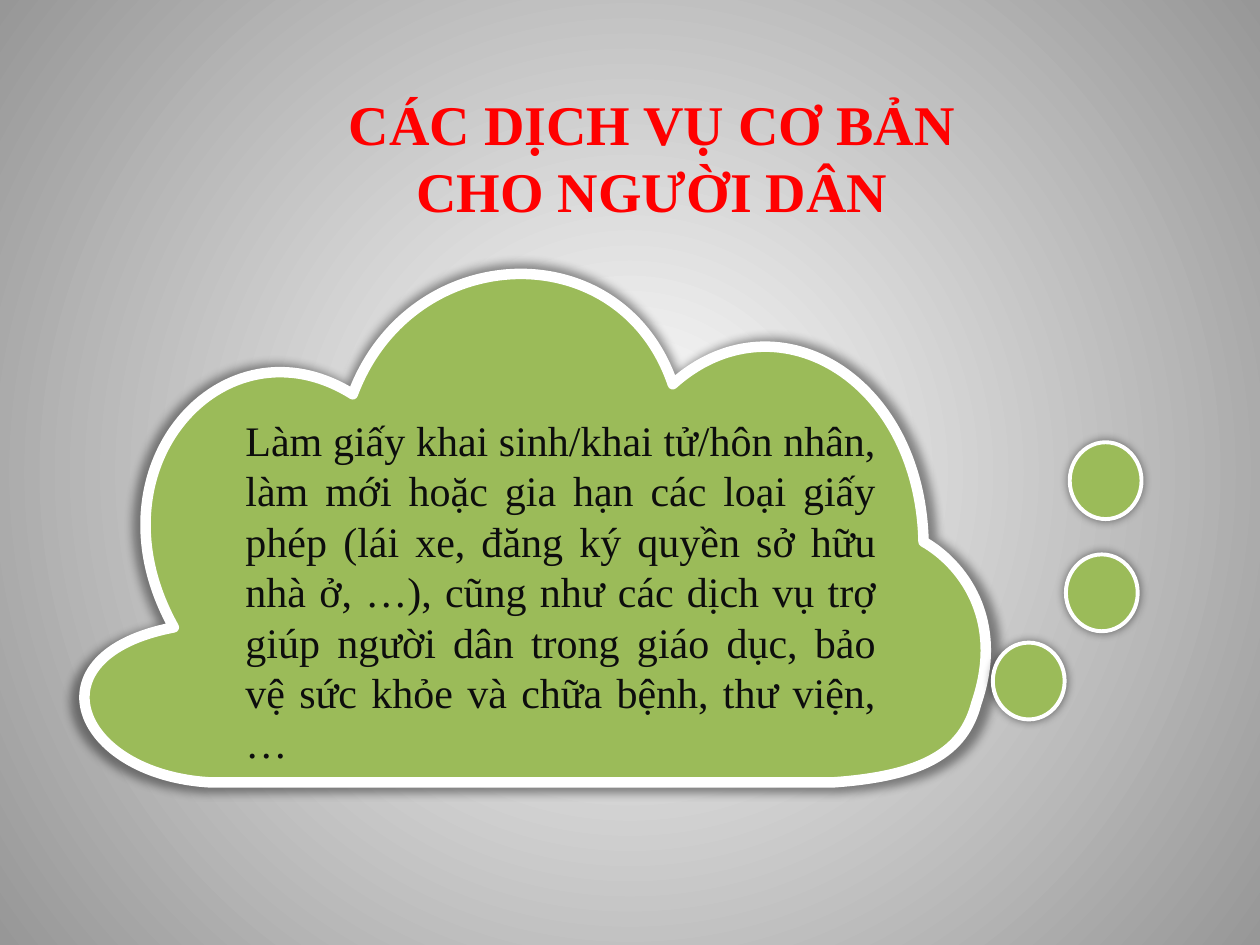
"""Build a slide with a cloud-shaped thought about basic public services."""
from lxml import etree
from pptx import Presentation
from pptx import util as u
from pptx.dml.color import RGBColor
from pptx.enum import shapes, text
from pptx.oxml.ns import qn

COLORS = {"center": "FFFFFF", "edge": "979797", "title": "FF0000", "body": "0D0D0D",
          "cloud": "9BBB59", "outline": "FFFFFF", "shadow": "000000"}
FONT = "Times New Roman"
TITLE = "CÁC DỊCH VỤ CƠ BẢN CHO NGƯỜI DÂN"
BODY = ("Làm giấy khai sinh/khai tử/hôn nhân, làm mới hoặc gia hạn các loại giấy phép "
        "(lái xe, đăng ký quyền sở hữu nhà ở, …), cũng như các dịch vụ trợ giúp người dân "
        "trong giáo dục, bảo vệ sức khỏe và chữa bệnh, thư viện, …")
CLOUD_BOX = (0.67, 2.18, 7.16, 4.03)
CLOUD_BASE = [(1.67, 6.21), (6.61, 6.21)]
CLOUD_CURVES = [
    [(7.33, 6.16), (7.65, 5.97), (7.75, 5.58)],
    [(7.98, 4.91), (7.63, 4.47), (7.33, 4.3)],
    [(7.3, 2.98), (6.14, 2.33), (5.34, 3.05)],
    [(4.93, 1.84), (3.26, 1.9), (2.8, 3.13)],
    [(1.78, 2.49), (0.67, 3.71), (1.38, 4.98)],
    [(0.22, 5.2), (0.6, 6.15), (1.67, 6.21)],
]
BUBBLES = [(7.88, 5.1), (8.46, 4.4), (8.49, 3.51)]
BUBBLE_SIZE = (0.57, 0.61)


def rgb(name):
    return RGBColor.from_string(COLORS[name])


def inches(values):
    return [u.Inches(v) for v in values]


class Canvas:
    def __init__(self, slide, font):
        self.slide = slide
        self.font = font

    def background(self, center, edge):
        bg = self.slide.background
        bg.fill.gradient()
        for stop, name in zip(bg.fill.gradient_stops, (center, edge)):
            stop.color.rgb = rgb(name)
        lin = bg.element.find(".//" + qn("a:lin"))
        path = etree.Element(qn("a:path"), path="circle")
        etree.SubElement(path, qn("a:fillToRect"), dict.fromkeys("ltrb", "50000"))
        lin.getparent().replace(lin, path)

    def decorate(self, sp, width):
        sp.fill.solid()
        sp.fill.fore_color.rgb = rgb("cloud")
        sp.line.color.rgb = rgb("outline")
        sp.line.width = u.Pt(width)
        sp.shadow.inherit = False
        effects = sp.element.spPr.find(qn("a:effectLst"))
        shadow = etree.SubElement(effects, qn("a:outerShdw"), blurRad=str(u.Pt(5)),
                                  sx="102000", sy="102000", algn="ctr", rotWithShape="0")
        color = etree.SubElement(shadow, qn("a:srgbClr"), val=COLORS["shadow"])
        etree.SubElement(color, qn("a:alpha"), val="40000")

    def cloud(self, box, base, curves, width):
        start, *rest = map(inches, base + [curve[-1] for curve in curves])
        builder = self.slide.shapes.build_freeform(*start, scale=1.0)
        builder.add_line_segments(rest, close=True)
        sp = builder.convert_to_shape()
        sp.left, sp.top, sp.width, sp.height = inches(box)
        path = sp.element.find(".//" + qn("a:path"))
        path.set("w", str(sp.width))
        path.set("h", str(sp.height))
        for step in path.findall(qn("a:lnTo")) + path.findall(qn("a:moveTo")):
            path.remove(step)
        steps = [("a:moveTo", base[:1]), ("a:lnTo", base[1:])]
        steps += [("a:cubicBezTo", curve) for curve in curves]
        for i, (tag, points) in enumerate(steps):
            step = etree.Element(qn(tag))
            path.insert(i, step)
            for x, y in map(inches, points):
                etree.SubElement(step, qn("a:pt"), x=str(x - sp.left), y=str(y - sp.top))
        self.decorate(sp, width)

    def bubbles(self, places, size, width):
        group = self.slide.shapes.add_group_shape()
        for place in places:
            sp = group.shapes.add_shape(shapes.MSO_SHAPE.OVAL, *inches(place + size))
            self.decorate(sp, width)

    def text(self, box, words, size, color, align, anchor=text.MSO_ANCHOR.TOP, bold=False):
        tf = self.slide.shapes.add_textbox(*inches(box)).text_frame
        tf.word_wrap = True
        tf.auto_size = text.MSO_AUTO_SIZE.SHAPE_TO_FIT_TEXT
        tf.vertical_anchor = anchor
        p = tf.paragraphs[0]
        p.text = words
        p.alignment = align
        p.font.name = self.font
        p.font.size = u.Pt(size)
        p.font.bold = bold
        p.font.color.rgb = rgb(color)


def main():
    prs = Presentation()
    prs.slide_width, prs.slide_height = inches((10, 7.5))
    canvas = Canvas(prs.slides.add_slide(prs.slide_layouts[6]), FONT)
    canvas.background("center", "edge")
    canvas.text((2.47, 0.65, 5.41, 1.18), TITLE, 32, "title", text.PP_ALIGN.CENTER,
                text.MSO_ANCHOR.MIDDLE, bold=True)
    canvas.cloud(CLOUD_BOX, CLOUD_BASE, CLOUD_CURVES, 6)
    canvas.bubbles(BUBBLES, BUBBLE_SIZE, 2.25)
    canvas.text((1.85, 3.24, 5.2, 2.93), BODY, 24, "body", text.PP_ALIGN.JUSTIFY)
    prs.save("out.pptx")


if __name__ == "__main__":
    main()
